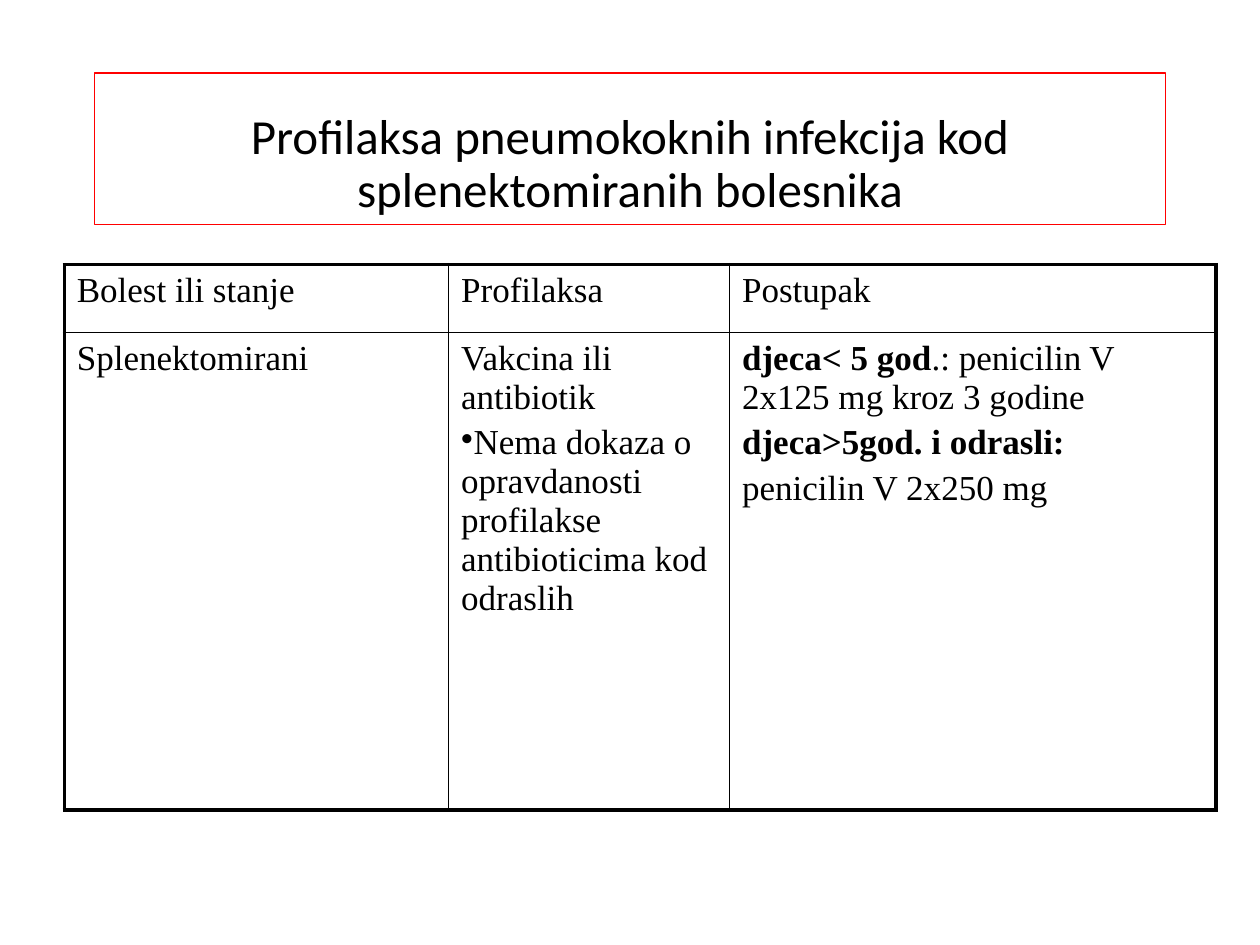
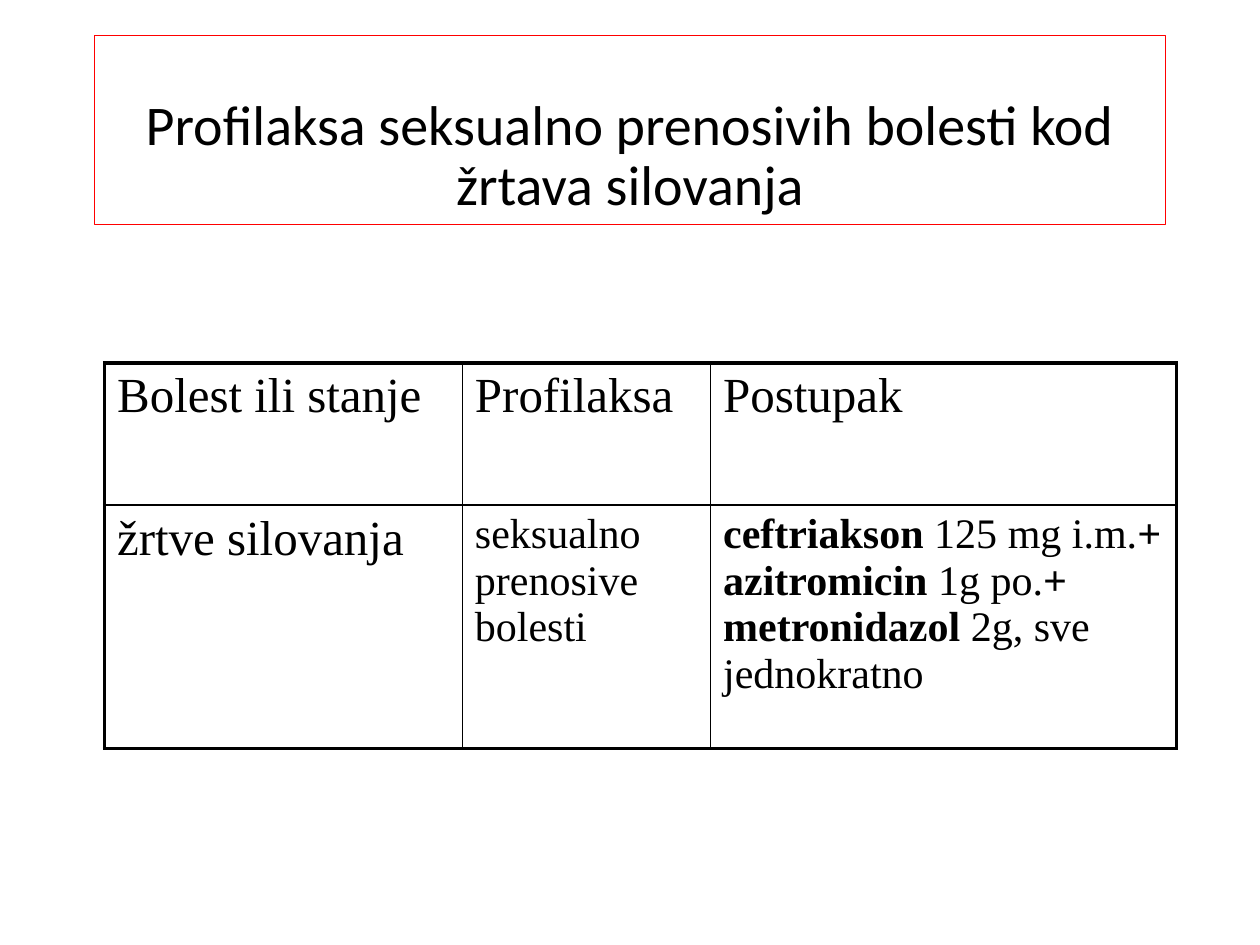
from lxml import etree
from pptx import Presentation
from pptx.dml.color import RGBColor
from pptx.enum.text import MSO_ANCHOR, PP_ALIGN
from pptx.oxml.ns import qn
from pptx.util import Inches, Pt

BLACK = RGBColor(0, 0, 0)
WHITE = RGBColor(255, 255, 255)
RED = RGBColor(255, 0, 0)
CENTER = PP_ALIGN.CENTER
BOTTOM = MSO_ANCHOR.BOTTOM
THICK, THIN = Pt(2.25), Pt(1)

deck = Presentation()
deck.slide_width, deck.slide_height = Inches(10), Inches(7.5)
# Lengths are in hundredths of the slide's width and height
COL, ROW = deck.slide_width / 100, deck.slide_height / 100
TITLE_LEFT, TITLE_WIDTH, TITLE_END = 7.5, 85, 23.73
HEAD = ["Bolest ili stanje", "Profilaksa", "Postupak"]

# Cell text: one line per paragraph, bold parts between asterisks
PAGES = [
    dict(title="Profilaksa pneumokoknih infekcija kod splenektomiranih bolesnika",
         top=7.73, size=28, place=(5.1, 28), cols=(30.5, 22.3, 38.6),
         rows=(7.2, 50.53), large=20, small=20,
         body=["Splenektomirani",
               "Vakcina ili antibiotik\n"
               "•Nema dokaza o opravdanosti profilakse antibioticima kod odraslih",
               "*djeca< 5 god*.: penicilin V 2x125 mg kroz 3 godine\n"
               "*djeca>5god. i odrasli:*\n"
               "penicilin V 2x250 mg"]),
    dict(title="Profilaksa seksualno prenosivih bolesti kod žrtava silovanja",
         top=3.73, size=32, place=(8.3, 38.4), cols=(28.4, 19.7, 37),
         rows=(15.07, 25.73), large=28, small=24,
         body=["žrtve silovanja",
               "seksualno prenosive bolesti",
               "*ceftriakson* 125 mg i.m.*+ azitromicin* 1g po."
               "*+ metronidazol *2g, sve jednokratno"]),
]


def add_edge(cell, side, width):
    line = etree.SubElement(cell._tc.get_or_add_tcPr(), qn("a:" + side), w=str(width))
    fill = etree.SubElement(line, qn("a:solidFill"))
    etree.SubElement(fill, qn("a:srgbClr"), val=str(BLACK))


def fill_cell(cell, text, size):
    frame = cell.text_frame
    for i, part in enumerate(text.split("\n")):
        para = frame.add_paragraph() if i else frame.paragraphs[0]
        if i:
            para.space_before = Pt(size * 0.2)
        if part.startswith("•"):
            part = part[1:]
            etree.SubElement(para._p.get_or_add_pPr(), qn("a:buChar"), char="•")
        font = para.font
        font.name, font.size, font.color.rgb = "Times New Roman", Pt(size), BLACK
        for j, piece in enumerate(part.split("*")):
            if piece:
                run = para.add_run()
                run.text = piece
                run.font.bold = j % 2 == 1


for page in PAGES:
    slide = deck.slides.add_slide(deck.slide_layouts[6])

    # Framed title
    box = slide.shapes.add_textbox(
        round(TITLE_LEFT * COL), round(page["top"] * ROW),
        round(TITLE_WIDTH * COL), round((TITLE_END - page["top"]) * ROW))
    box.fill.solid()
    box.fill.fore_color.rgb = WHITE
    box.line.color.rgb = RED
    box.line.width = Pt(0.75)
    frame = box.text_frame
    frame.word_wrap = True
    frame.vertical_anchor = BOTTOM
    para = frame.paragraphs[0]
    para.text = page["title"]
    para.alignment = CENTER
    para.line_spacing = 0.9
    font = para.font
    font.name, font.size, font.color.rgb = "Calibri", Pt(page["size"]), BLACK

    # Table grid
    left, top = page["place"]
    cols, rows = page["cols"], page["rows"]
    table = slide.shapes.add_table(
        len(rows), len(cols), round(left * COL), round(top * ROW),
        round(sum(cols) * COL), round(sum(rows) * ROW)).table
    table.first_row = table.horz_banding = False
    for col, width in zip(table.columns, cols):
        col.width = round(width * COL)
    for row, height in zip(table.rows, rows):
        row.height = round(height * ROW)

    # Cells: thick outer edges, thin inner ones
    for r, texts in enumerate([HEAD, page["body"]]):
        for c, text in enumerate(texts):
            cell = table.cell(r, c)
            fill_cell(cell, text, page["small"] if r and c else page["large"])
            outer = {"lnL": c == 0, "lnR": c == len(cols) - 1,
                     "lnT": r == 0, "lnB": r == len(rows) - 1}
            for side, thick in outer.items():
                add_edge(cell, side, THICK if thick else THIN)
            cell.fill.background()

deck.save("out.pptx")
